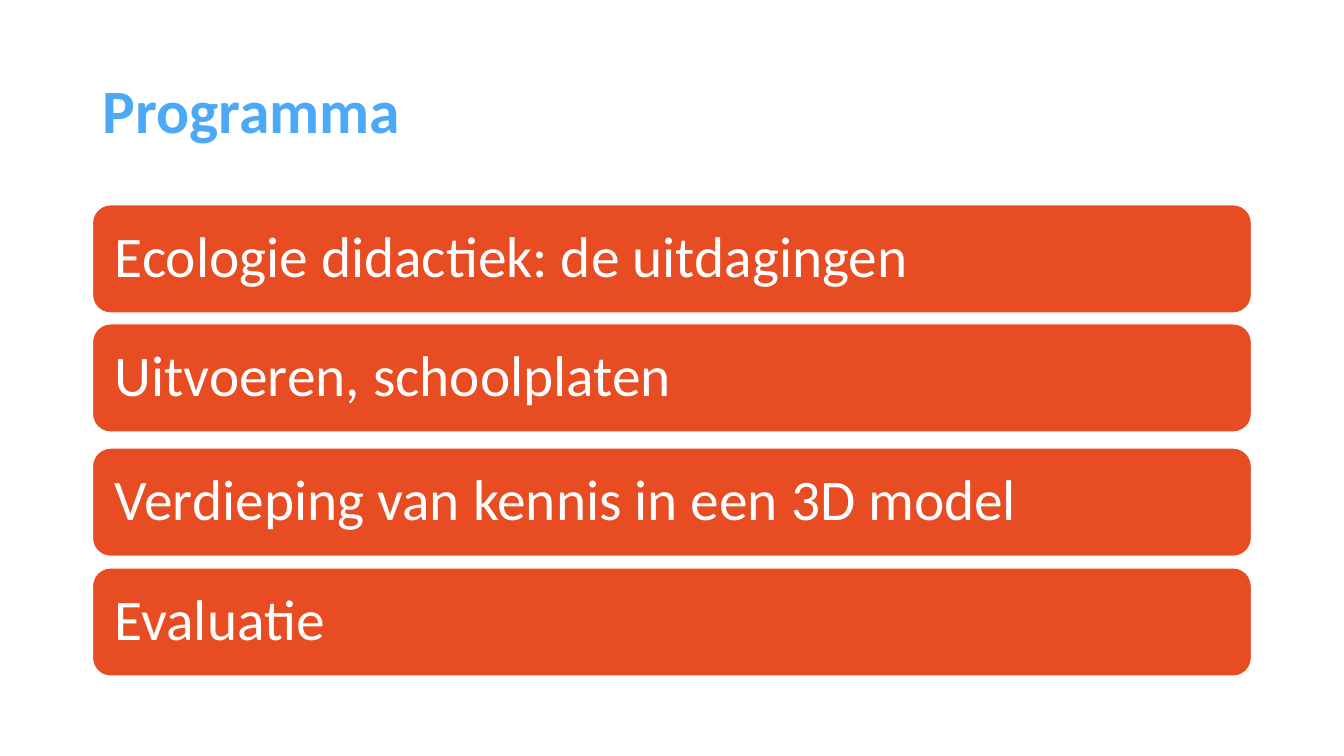
from dataclasses import dataclass

from pptx import Presentation
from pptx.dml.color import RGBColor
from pptx.enum.shapes import MSO_SHAPE
from pptx.enum.text import MSO_ANCHOR, MSO_AUTO_SIZE, PP_ALIGN
from pptx.util import Cm, Pt


@dataclass(frozen=True)
class Theme:
    font: str = "Calibri"
    title_color: RGBColor = RGBColor(0x4B, 0xA9, 0xF7)
    bar_color: RGBColor = RGBColor(0xE8, 0x4C, 0x22)
    white: RGBColor = RGBColor(0xFF, 0xFF, 0xFF)
    title_size: int = 44
    bar_size: int = 41


THEME = Theme()

# Each programme item with its distance in cm from the top of the list
PROGRAMME = [
    ("Ecologie didactiek: de uitdagingen", 0),
    ("Uitvoeren, schoolplaten", 3),
    ("Verdieping van kennis in een 3D model", 6.13),
    ("Evaluatie", 9.15),
]
BAR_HEIGHT = 2.73


def set_text(shape, text, size, color, bold=False):
    frame = shape.text_frame
    frame.text = text
    frame.word_wrap = True
    frame.auto_size = MSO_AUTO_SIZE.NONE
    frame.vertical_anchor = MSO_ANCHOR.MIDDLE
    paragraph = frame.paragraphs[0]
    paragraph.alignment = PP_ALIGN.LEFT
    paragraph.line_spacing = 0.9
    font = paragraph.runs[0].font
    font.name = THEME.font
    font.size = Pt(size)
    font.bold = bold
    font.color.rgb = color


def place_title(slide, text, left, top, width, height):
    title = slide.shapes.title
    title.left, title.top = Cm(left), Cm(top)
    title.width, title.height = Cm(width), Cm(height)
    set_text(title, text, THEME.title_size, THEME.title_color, bold=True)


def add_programme(slide, items, left, top, width):
    for text, offset in items:
        bar = slide.shapes.add_shape(
            MSO_SHAPE.ROUNDED_RECTANGLE,
            Cm(left), Cm(top + offset), Cm(width), Cm(BAR_HEIGHT),
        )
        bar.shadow.inherit = False
        bar.fill.solid()
        bar.fill.fore_color.rgb = THEME.bar_color
        bar.line.color.rgb = THEME.white
        bar.line.width = Pt(1)
        set_text(bar, text, THEME.bar_size, THEME.white)
        # The rounded corners already inset the text by 0.13 cm
        bar.text_frame.margin_left = bar.text_frame.margin_right = Cm(0.43)


def main():
    presentation = Presentation()
    presentation.slide_width = Cm(33.87)
    presentation.slide_height = Cm(19.05)
    slide = presentation.slides.add_slide(presentation.slide_layouts[5])

    # Heading
    place_title(slide, "Programma", left=2.33, top=1.02, width=29.21, height=3.68)
    # Programme bars
    add_programme(slide, PROGRAMME, left=2.33, top=5.16, width=29.21)

    presentation.save("out.pptx")


if __name__ == "__main__":
    main()
